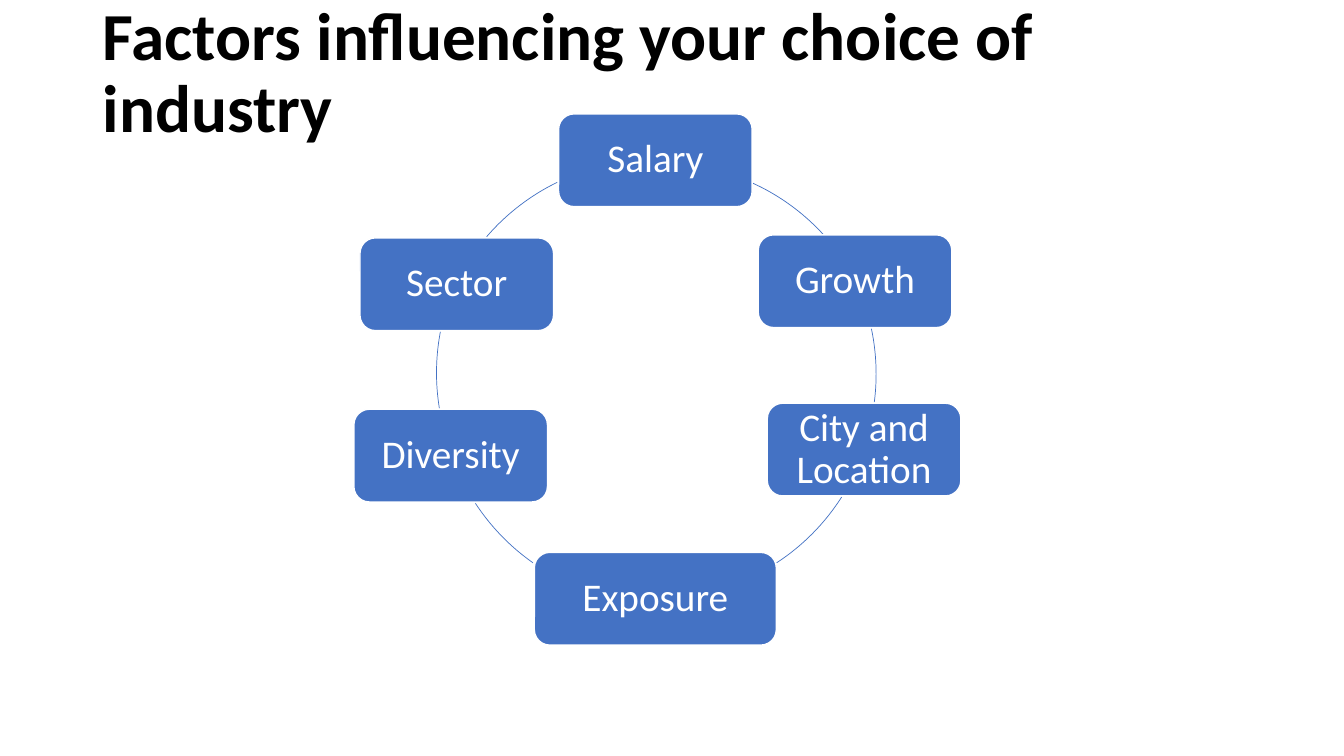
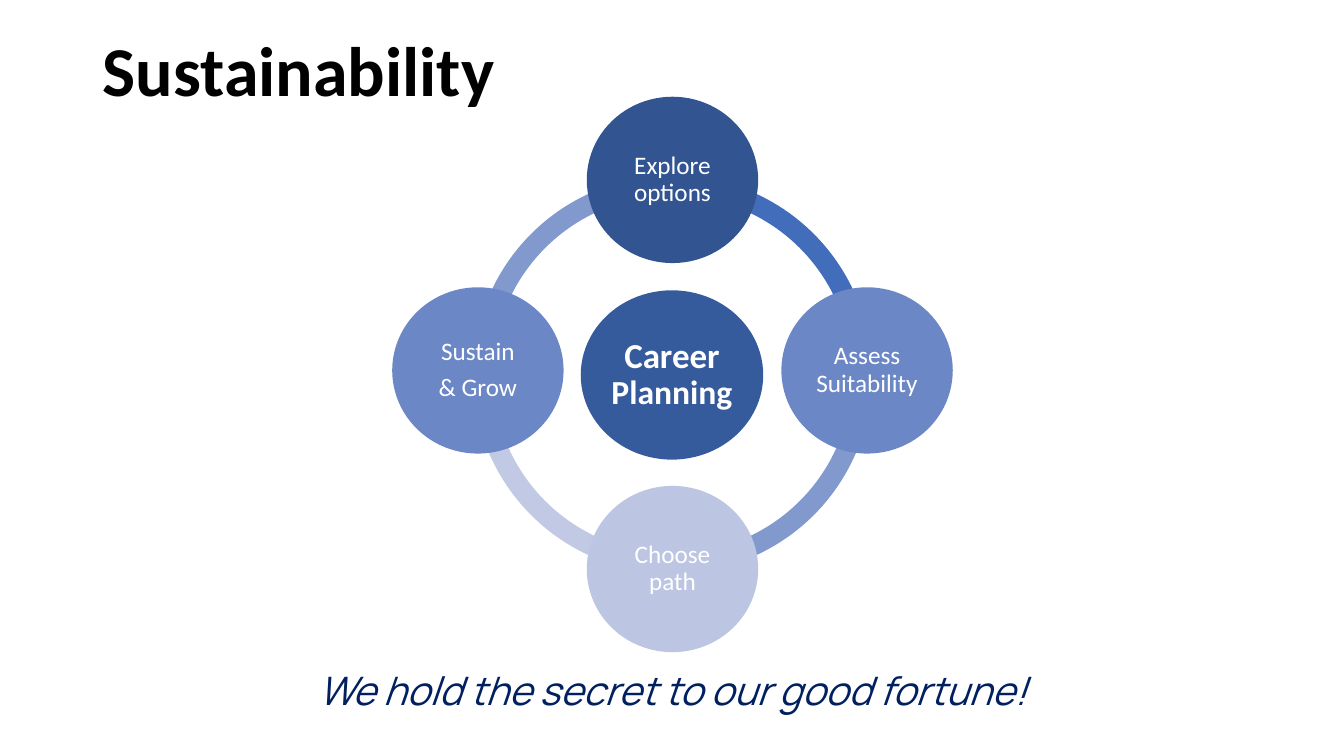
from pptx import Presentation
from pptx.dml.color import RGBColor
from pptx.enum.shapes import MSO_SHAPE
from pptx.enum.text import MSO_ANCHOR, PP_ALIGN
from pptx.util import Emu, Pt

PX = 9144
FONT = "Calibri"
COLORS = {
    "black": "000000",
    "white": "FFFFFF",
    "navy": "002060",
    "blue": "4472C4",
    "hub": "365B9D",
    "deep": "325491",
    "mid": "6C87C5",
    "pale": "BCC6E2",
    "arc_strong": "416DBB",
    "arc_mid": "8299CE",
    "arc_pale": "C1C9E4",
}
FACTORS = [
    ("Salary", 554, 113, 192),
    ("Growth", 752, 233, 192),
    ("City and Location", 761, 400, 192),
    ("Exposure", 530, 548, 240),
    ("Diversity", 351, 406, 192),
    ("Sector", 357, 236, 192),
]
FACTOR_ARCS = [
    (438, 162, 294.3, 317.4),
    (433, 153, 348.1, 7.4),
    (433, 158, 32.5, 56.8),
    (436, 162, 125.1, 146.8),
    (433, 152, 170.7, 190.8),
    (430, 159, 220.7, 244.1),
]
STEPS = [
    ("Explore options", 582, 96, "deep"),
    ("Assess Suitability", 775, 285, "mid"),
    ("Choose path", 582, 482, "pale"),
    ("Sustain\n& Grow", 389, 285, "mid"),
]
RING = ["arc_mid", "arc_pale", "arc_mid", "arc_strong"]


def px(n):
    return Emu(n * PX)


def rgb(name):
    return RGBColor.from_string(COLORS[name])


def set_insets(tf, inset):
    tf.margin_left = tf.margin_right = tf.margin_top = tf.margin_bottom = px(inset)


def style(p, size, color, font=FONT, bold=False, italic=False):
    p.line_spacing = 0.9
    p.font.name = font
    p.font.size = Pt(size)
    p.font.bold = bold
    p.font.italic = italic
    p.font.color.rgb = rgb(color)


def add_text(slide, text, x, y, w, h, size, color, align=PP_ALIGN.LEFT, **font):
    tf = slide.shapes.add_textbox(px(x), px(y), px(w), px(h)).text_frame
    tf.word_wrap = True
    set_insets(tf, 0)
    p = tf.paragraphs[0]
    p.text = text
    p.alignment = align
    style(p, size, color, **font)


def add_title(slide, text, y, size):
    add_text(slide, text, 102, y, 1130, 145, size, "black", bold=True)


def add_shape(slide, kind, x, y, w, h, fill=None, line=None, weight=1):
    sp = slide.shapes.add_shape(kind, px(x), px(y), px(w), px(h))
    sp.shadow.inherit = False
    if fill:
        sp.fill.solid()
        sp.fill.fore_color.rgb = rgb(fill)
    else:
        sp.fill.background()
    if line:
        sp.line.color.rgb = rgb(line)
        sp.line.width = Pt(weight)
    else:
        sp.line.fill.background()
    return sp


def add_label(sp, text, size, inset, bold=False):
    tf = sp.text_frame
    tf.word_wrap = True
    tf.vertical_anchor = MSO_ANCHOR.MIDDLE
    set_insets(tf, inset)
    tf.text = text
    for p in tf.paragraphs:
        p.alignment = PP_ALIGN.CENTER
        style(p, size, "white", bold=bold)
    for p in tf.paragraphs[:-1]:
        p.space_after = Pt(6)


def set_angles(sp, start, end):
    sp.adjustments[0] = start * 0.6
    sp.adjustments[1] = end * 0.6


def build_factors(slide):
    add_title(slide, "Factors influencing your choice of industry", 2, 48)
    for x, y, start, end in FACTOR_ARCS:
        sp = add_shape(slide, MSO_SHAPE.ARC, x, y, 436, 436, line="blue", weight=0.5)
        set_angles(sp, start, end)
    for text, x, y, w in FACTORS:
        sp = add_shape(slide, MSO_SHAPE.ROUNDED_RECTANGLE, x, y, w, 92, "blue", "white")
        add_label(sp, text, 28, 12)


def build_sustainability(slide):
    add_title(slide, "Sustainability", 36, 50)
    add_text(slide, "We hold the secret to our good fortune!", 92, 666, 1150, 48,
             28, "navy", PP_ALIGN.CENTER, font="Manrope", italic=True)
    for start, color in zip((180, 90, 0, 270), RING):
        sp = add_shape(slide, MSO_SHAPE.BLOCK_ARC, 469, 174, 396, 395, color)
        set_angles(sp, start, (start + 90) % 360)
        sp.adjustments[2] = 0.05
    hub = add_shape(slide, MSO_SHAPE.OVAL, 576, 288, 181, 168, "hub")
    add_label(hub, "Career ", 24, 3, bold=True)
    p = hub.text_frame.paragraphs[0]
    p.runs[0].font.size = Pt(25)
    p.add_run().text = "Planning"
    for text, x, y, color in STEPS:
        sp = add_shape(slide, MSO_SHAPE.OVAL, x, y, 170, 165, color)
        add_label(sp, text, 18, 3)


def main():
    prs = Presentation()
    prs.slide_width, prs.slide_height = px(1333), px(750)
    for build in (build_factors, build_sustainability):
        build(prs.slides.add_slide(prs.slide_layouts[6]))
    prs.save("out.pptx")


if __name__ == "__main__":
    main()
